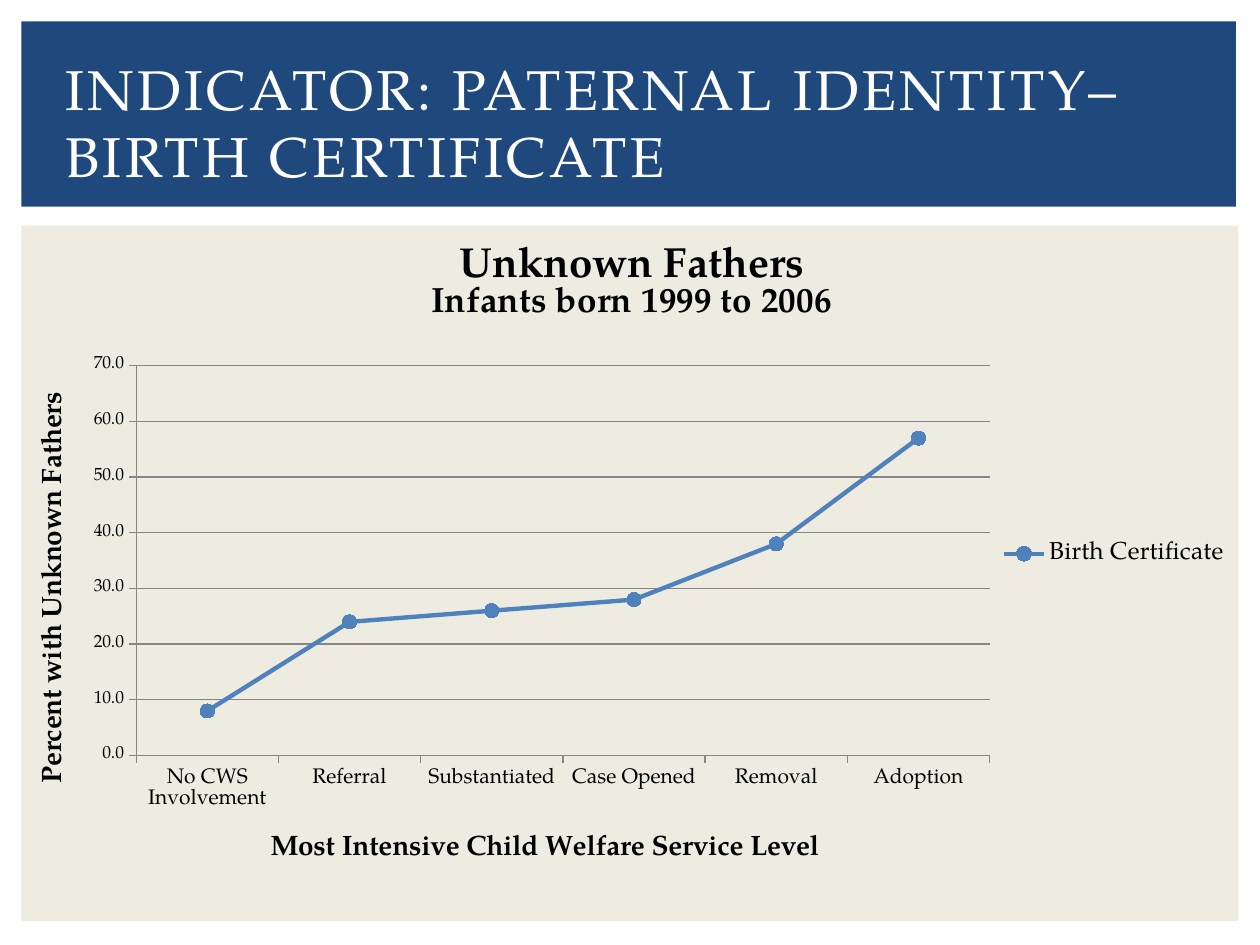
from lxml import etree
from pptx import Presentation
from pptx.chart.data import CategoryChartData
from pptx.dml.color import RGBColor
from pptx.enum.chart import XL_CHART_TYPE, XL_LEGEND_POSITION, XL_MARKER_STYLE, XL_TICK_MARK
from pptx.enum.shapes import MSO_SHAPE
from pptx.enum.text import MSO_ANCHOR, PP_ALIGN
from pptx.oxml.ns import qn
from pptx.util import Inches, Pt

LINE = XL_CHART_TYPE.LINE_MARKERS
RIGHT = XL_LEGEND_POSITION.RIGHT
CIRCLE = XL_MARKER_STYLE.CIRCLE
OUT, NONE = XL_TICK_MARK.OUTSIDE, XL_TICK_MARK.NONE
RECT = MSO_SHAPE.RECTANGLE
MIDDLE, LEFT = MSO_ANCHOR.MIDDLE, PP_ALIGN.LEFT

FONT = "TeX Gyre Pagella"
NAVY, SAND, BLUE, GRAY = "1F497D", "EEECE1", "4F81BD", "868686"
BLACK, WHITE = "000000", "FFFFFF"

HEADING = "INDICATOR: PATERNAL IDENTITY– BIRTH CERTIFICATE"
PANELS = [(SAND, (0.17, 1.79, 9.66, 5.52)), (NAVY, (0.17, 0.17, 9.64, 1.47))]
HEAD_BOX = (0.42, 0.39, 9.17, 1.15)
CHART_BOX = (0.17, 1.75, 9.69, 5.29)

TITLE = [("Unknown Fathers", 24), ("Infants born 1999 to 2006", 20)]
X_TITLE = [("Most Intensive Child Welfare Service Level", 16)]
Y_TITLE = [("Percent with Unknown Fathers", 16)]
SERIES = "Birth Certificate"
POINTS = {
    "No CWS Involvement": 8,
    "Referral": 24,
    "Substantiated": 26,
    "Case Opened": 28,
    "Removal": 38,
    "Adoption": 57,
}


def color(code):
    return RGBColor.from_string(code)


def style(font, size, code=BLACK, bold=False):
    font.name, font.size, font.bold = FONT, Pt(size), bold
    font.color.rgb = color(code)


def box(at):
    return [Inches(n) for n in at]


def place(node, inner=False, **spots):
    """Set a manual layout, as shares of the chart, on a chart part."""
    layout = node.find(qn("c:layout"))
    if layout is None:
        layout = etree.Element(qn("c:layout"))
        node.insert(0, layout)
    for old in list(layout):
        layout.remove(old)
    manual = etree.SubElement(layout, qn("c:manualLayout"))
    rows = [("layoutTarget", "inner")] if inner else []
    rows += [("xMode", "edge"), ("yMode", "edge"), *spots.items()]
    for tag, val in rows:
        etree.SubElement(manual, qn("c:" + tag)).set("val", str(val))


def write(title, lines):
    frame = title.text_frame
    for i, (text, size) in enumerate(lines):
        para = frame.add_paragraph() if i else frame.paragraphs[0]
        para.text = text
        style(para.font, size, bold=True)


def add_panel(slide, fill, at):
    panel = slide.shapes.add_shape(RECT, *box(at))
    panel.shadow.inherit = False
    panel.fill.solid()
    panel.fill.fore_color.rgb = color(fill)
    panel.line.fill.background()


def add_heading(slide):
    frame = slide.shapes.add_textbox(*box(HEAD_BOX)).text_frame
    frame.word_wrap = True
    frame.vertical_anchor = MIDDLE
    para = frame.paragraphs[0]
    para.text = HEADING
    para.alignment = LEFT
    style(para.font, 32, WHITE)
    para.runs[0].font._element.set("spc", "200")


def add_graph(slide):
    data = CategoryChartData(number_format="0.0")
    data.categories = list(POINTS)
    data.add_series(SERIES, list(POINTS.values()))
    chart = slide.shapes.add_chart(LINE, *box(CHART_BOX), data).chart
    style(chart.font, 10)
    chart.has_title = True
    write(chart.chart_title, TITLE)
    chart.has_legend = True
    chart.legend.position = RIGHT
    chart.legend.include_in_layout = False
    style(chart.legend.font, 14)

    x_axis, y_axis = chart.category_axis, chart.value_axis
    for axis, lines, size, x, y in [
        (x_axis, X_TITLE, 12, 0.2, 0.91),
        (y_axis, Y_TITLE, 10, 0.01, 0.25),
    ]:
        write(axis.axis_title, lines)
        place(axis.axis_title._element, x=x, y=y)
        axis.major_tick_mark, axis.minor_tick_mark = OUT, NONE
        axis.format.line.color.rgb = color(GRAY)
        style(axis.tick_labels.font, size)
    y_axis.minimum_scale, y_axis.maximum_scale, y_axis.major_unit = 0, 70, 10
    y_axis.tick_labels.number_format = "0.0"
    y_axis.tick_labels.number_format_is_linked = False
    y_axis.has_major_gridlines = True
    y_axis.major_gridlines.format.line.color.rgb = color(GRAY)
    area = chart._chartSpace.find(".//" + qn("c:plotArea"))
    place(area, inner=True, x=0.094, y=0.218, w=0.699, h=0.585)

    plot = chart.plots[0]
    plot.vary_by_categories = False
    line = plot.series[0]
    line.smooth = False
    line.format.line.width = Pt(2.5)
    line.format.line.color.rgb = color(BLUE)
    mark = line.marker
    mark.style, mark.size = CIRCLE, 8
    mark.format.fill.solid()
    mark.format.fill.fore_color.rgb = color(BLUE)
    mark.format.line.color.rgb = color(BLUE)


def main():
    deck = Presentation()
    deck.slide_width, deck.slide_height = Inches(10), Inches(7.5)
    slide = deck.slides.add_slide(deck.slide_layouts[6])
    for fill, at in PANELS:
        add_panel(slide, fill, at)
    add_heading(slide)
    add_graph(slide)
    deck.save("out.pptx")


if __name__ == "__main__":
    main()
